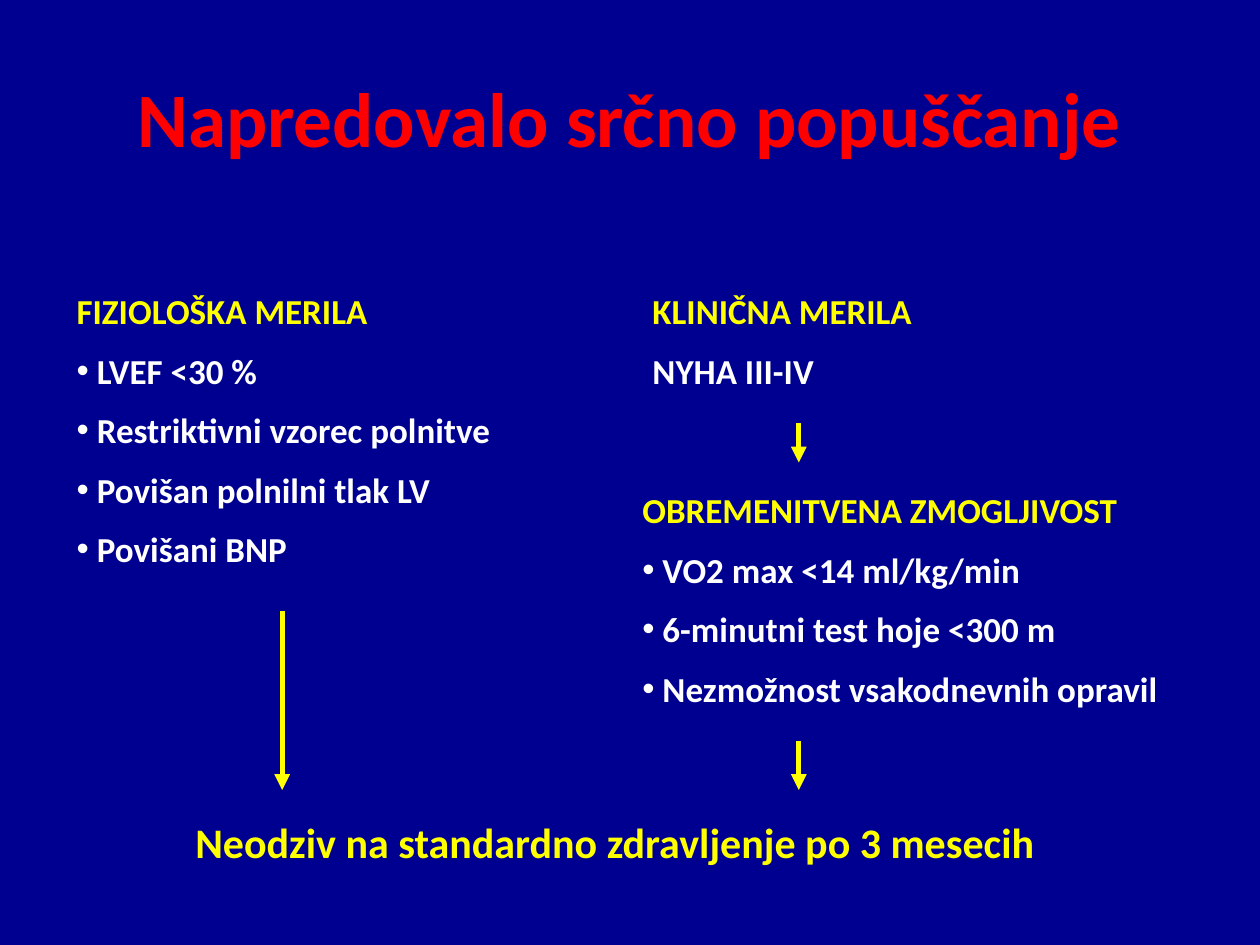
from lxml import etree
from pptx import Presentation
from pptx.dml.color import RGBColor
from pptx.enum.shapes import MSO_CONNECTOR
from pptx.enum.text import MSO_ANCHOR, PP_ALIGN
from pptx.oxml.ns import qn
from pptx.util import Inches, Pt

STRAIGHT = MSO_CONNECTOR.STRAIGHT
MIDDLE, TOP = MSO_ANCHOR.MIDDLE, MSO_ANCHOR.TOP
LEFT, CENTER = PP_ALIGN.LEFT, PP_ALIGN.CENTER
NAVY = RGBColor(0x00, 0x00, 0x90)
RED = RGBColor(0xFF, 0x00, 0x00)
YELLOW = RGBColor(0xFF, 0xFF, 0x00)
WHITE = RGBColor(0xFF, 0xFF, 0xFF)
FONT = "Calibri"
BULLET_INDENT = Inches(0.16)
LEFT_AXIS, RIGHT_AXIS, ARROW_END = 2.24, 6.34, 6.27


def add_bullet(p):
    """Give a paragraph a round bullet with a hanging indent."""
    pPr = p._p.get_or_add_pPr()
    pPr.set("marL", str(BULLET_INDENT))
    pPr.set("indent", str(-BULLET_INDENT))
    etree.SubElement(pPr, qn("a:buFont")).set("typeface", "Arial")
    etree.SubElement(pPr, qn("a:buChar")).set("char", "•")


def add_line(p, text, size, color, align=LEFT):
    """Fill a paragraph with one bold run."""
    p.alignment = align
    p.space_before = Pt(size / 2)
    r = p.add_run()
    r.text = text
    for name, value in {"name": FONT, "size": Pt(size), "bold": True}.items():
        setattr(r.font, name, value)
    r.font.color.rgb = color


def add_frame(slide, box, anchor=TOP):
    """Return the wrapped text frame of a new text box."""
    tf = slide.shapes.add_textbox(*map(Inches, box)).text_frame
    tf.word_wrap = True
    tf.vertical_anchor = anchor
    return tf


def add_banner(slide, box, text, size, color, anchor=TOP):
    """Place one centred line in a box."""
    tf = add_frame(slide, box, anchor)
    add_line(tf.paragraphs[0], text, size, color, CENTER)


def add_criteria(slide, box, heading, items, bulleted=True):
    """Place a yellow heading over white criteria."""
    tf = add_frame(slide, box)
    add_line(tf.paragraphs[0], heading, 20, YELLOW)
    for item in items:
        p = tf.add_paragraph()
        add_line(p, item, 20, WHITE)
        if bulleted:
            add_bullet(p)


def add_down_arrow(slide, x, top, bottom):
    """Draw a vertical arrow pointing down."""
    ends = map(Inches, (x, top, x, bottom))
    sp = slide.shapes.add_connector(STRAIGHT, *ends)
    sp.line.color.rgb = YELLOW
    sp.line.width = Pt(3)
    ln = sp.line._get_or_add_ln()
    etree.SubElement(ln, qn("a:tailEnd")).set("type", "triangle")
    etree.SubElement(sp._element.spPr, qn("a:effectLst"))


def main():
    """Build and save the slide."""
    prs = Presentation()
    prs.slide_width, prs.slide_height = Inches(10), Inches(7.5)
    slide = prs.slides.add_slide(prs.slide_layouts[6])
    slide.background.fill.solid()
    slide.background.fill.fore_color.rgb = NAVY

    add_banner(slide, (0.5, 0.3, 9, 1.25), "Napredovalo srčno popuščanje",
               44, RED, MIDDLE)
    add_criteria(slide, (0.51, 2.25, 4.09, 2.43), "FIZIOLOŠKA MERILA",
                 ["LVEF <30 %", "Restriktivni vzorec polnitve",
                  "Povišan polnilni tlak LV", "Povišani BNP"])
    add_criteria(slide, (5.08, 2.25, 2.68, 0.93), "KLINIČNA MERILA",
                 ["NYHA III-IV"], bulleted=False)
    add_criteria(slide, (5, 3.83, 5.2, 1.93), "OBREMENITVENA ZMOGLJIVOST",
                 ["VO2 max <14 ml/kg/min", "6-minutni test hoje <300 m",
                  "Nezmožnost vsakodnevnih opravil"])
    add_banner(slide, (0.59, 6.43, 8.58, 0.5),
               "Neodziv na standardno zdravljenje po 3 mesecih", 24, YELLOW)

    add_down_arrow(slide, LEFT_AXIS, 4.85, ARROW_END)
    add_down_arrow(slide, RIGHT_AXIS, 3.36, 3.67)
    add_down_arrow(slide, RIGHT_AXIS, 5.88, ARROW_END)
    prs.save("out.pptx")


if __name__ == "__main__":
    main()
